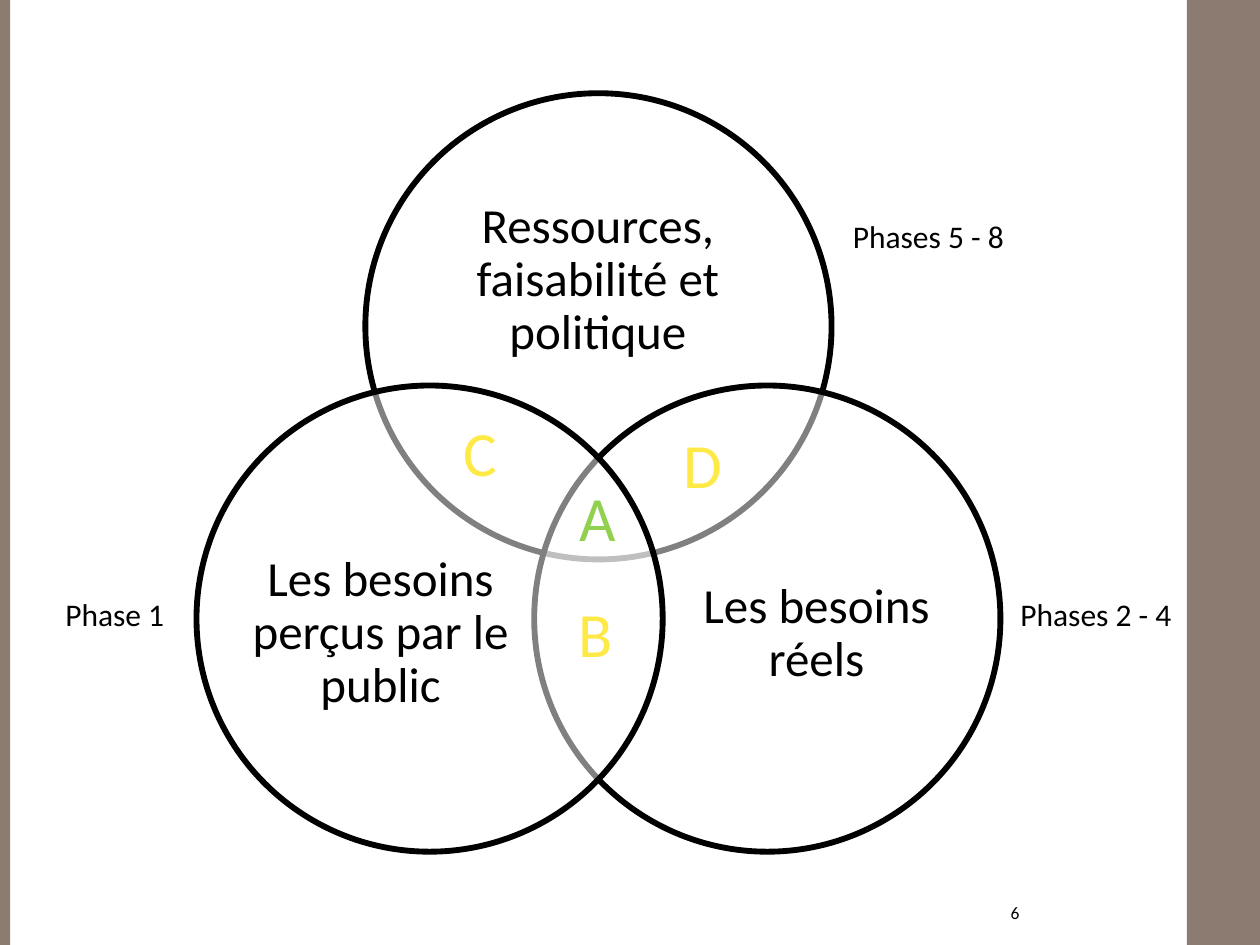
from lxml import etree
from pptx import Presentation
from pptx import util as u
from pptx.dml.color import RGBColor
from pptx.enum import shapes, text
from pptx.oxml.ns import qn

BLACK, WHITE, BROWN = "000000", "FFFFFF", "8C7B70"
GREEN, YELLOW = "92D050", "FFE947"
DIAMETER = 3.7


def color(value):
    return RGBColor.from_string(value)


def apply(target, values):
    for name, value in values.items():
        setattr(target, name, value)


class VennSlide:
    font_name = "Calibri"
    line_width = 3.35

    def __init__(self, presentation):
        self.slide = presentation.slides.add_slide(presentation.slide_layouts[6])

    def shape(self, kind, box, fill):
        shape = self.slide.shapes.add_shape(kind, *map(u.Inches, box))
        shape.shadow.inherit = False
        shape.fill.solid()
        shape.fill.fore_color.rgb = color(fill)
        return shape

    def band(self, left, width):
        band = self.shape(shapes.MSO_SHAPE.RECTANGLE, (left, 0, width, 7.5), BROWN)
        band.line.fill.background()

    def circle(self, left, top):
        box = (left, top, DIAMETER, DIAMETER)
        circle = self.shape(shapes.MSO_SHAPE.OVAL, box, WHITE)
        circle.line.color.rgb = color(BLACK)
        circle.line.width = u.Pt(self.line_width)
        fill = circle.fill._xPr.find(qn("a:solidFill"))[0]
        etree.SubElement(fill, qn("a:alpha"), val="50000")

    def label(self, words, box, size, fill=BLACK, frame_format=None, paragraph_format=None):
        frame = self.slide.shapes.add_textbox(*map(u.Inches, box)).text_frame
        apply(frame, {"word_wrap": True, **(frame_format or {})})
        paragraph = frame.paragraphs[0]
        apply(paragraph, paragraph_format or {})
        run = paragraph.add_run()
        run.text = words
        apply(run.font, {"name": self.font_name, "size": u.Pt(size)})
        run.font.color.rgb = color(fill)

    def topic(self, words, box):
        frame_format = {f"margin_{side}": 0 for side in ("left", "top", "right", "bottom")}
        frame_format["vertical_anchor"] = text.MSO_ANCHOR.MIDDLE
        paragraph_format = {"alignment": text.PP_ALIGN.CENTER, "line_spacing": 0.9}
        self.label(words, box, 28, BLACK, frame_format, paragraph_format)

    def page_number(self, number):
        self.label(str(number), (7.11, 7.08, 1.08, 0.33), 10, BLACK,
                   {"vertical_anchor": text.MSO_ANCHOR.MIDDLE},
                   {"alignment": text.PP_ALIGN.RIGHT})


def main():
    presentation = Presentation()
    apply(presentation, {"slide_width": u.Inches(10), "slide_height": u.Inches(7.5)})
    venn = VennSlide(presentation)

    for left, width in ((9.42, 0.58), (0, 0.08)):
        venn.band(left, width)

    topics = (
        ("Ressources, faisabilité et politique", (2.9, 0.74), (3.39, 1.39, 2.71, 1.67)),
        ("Les besoins réels", (4.24, 3.06), (5.37, 4.01, 2.22, 2.04)),
        ("Les besoins perçus par le public", (1.56, 3.06), (1.91, 4.01, 2.22, 2.04)),
    )
    for words, corner, box in topics:
        venn.circle(*corner)
        venn.topic(words, box)

    overlaps = (
        ("A", 4.5, 3.75, GREEN),
        ("B", 4.49, 4.67, YELLOW),
        ("C", 3.58, 3.23, YELLOW),
        ("D", 5.33, 3.33, YELLOW),
    )
    for letter, left, top, fill in overlaps:
        venn.label(letter, (left, top, 0.67, 0.71), 36, fill)

    phases = (
        ("Phase 1", 0.42, 4.67, 1),
        ("Phases 2 - 4", 8, 4.67, 1.5),
        ("Phases 5 - 8", 6.67, 1.67, 1.5),
    )
    for words, left, top, width in phases:
        venn.label(words, (left, top, width, 0.4), 18)

    venn.page_number(6)
    presentation.save("out.pptx")


if __name__ == "__main__":
    main()
